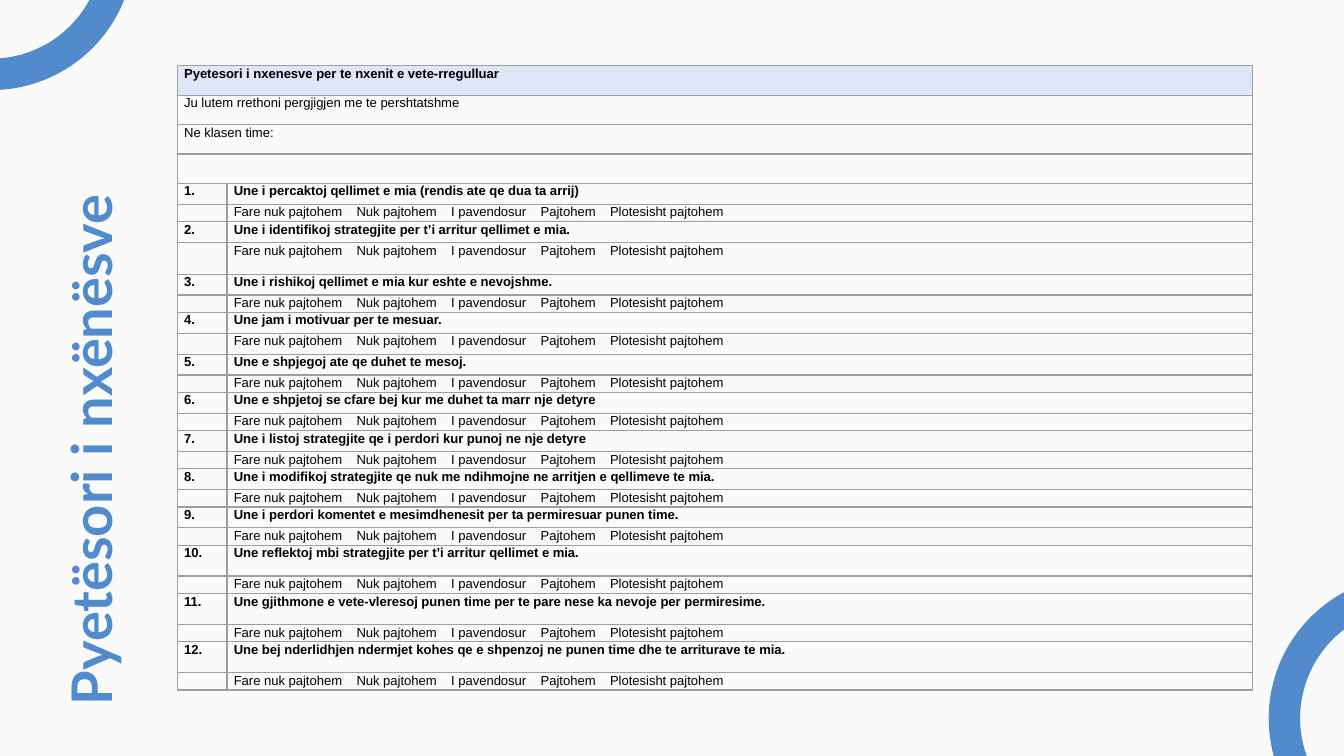
from dataclasses import dataclass

from lxml import etree
from pptx import Presentation
from pptx.dml.color import RGBColor
from pptx.enum.shapes import MSO_SHAPE
from pptx.enum.text import MSO_ANCHOR
from pptx.oxml.ns import qn
from pptx.util import Inches, Pt

BLOCK_ARC = MSO_SHAPE.BLOCK_ARC
TOP = MSO_ANCHOR.TOP

PAPER = RGBColor(0xFA, 0xFA, 0xFA)
BLUE = RGBColor(0x51, 0x8B, 0xCB)
HEADER_BLUE = RGBColor(0xDE, 0xE6, 0xF7)
GRID_GREY = RGBColor(0x9E, 0x9E, 0x9E)
BLACK = RGBColor(0, 0, 0)

TEXT_SIZE = Pt(7)
GRID_WIDTH = Pt(0.75)
# Row heights follow the type, so they are in points
INTRO_HEIGHT = 15.75
TALL = 16.6


@dataclass(frozen=True)
class Question:
    text: str
    height: float = 11.2
    answer_height: float = 8.8


@dataclass(frozen=True)
class Ring:
    left: float
    top: float
    rotation: int


INTRO = [
    "Pyetesori i nxenesve per te nxenit e vete-rregulluar",
    "Ju lutem rrethoni pergjigjen me te pershtatshme",
    "Ne klasen time:",
    "",
]
QUESTIONS = [
    Question("Une i percaktoj qellimet e mia (rendis ate qe dua ta arrij)"),
    Question("Une i identifikoj strategjite per t’i arritur qellimet e mia.", answer_height=17),
    Question("Une i rishikoj qellimet e mia kur eshte e nevojshme."),
    Question("Une jam i motivuar per te mesuar.", answer_height=11.2),
    Question("Une e shpjegoj ate qe duhet te mesoj."),
    Question("Une e shpjetoj se cfare bej kur me duhet ta marr nje detyre"),
    Question("Une i listoj strategjite qe i perdori kur punoj ne nje detyre"),
    Question("Une i modifikoj strategjite qe nuk me ndihmojne ne arritjen e qellimeve te mia."),
    Question("Une i perdori komentet e mesimdhenesit per ta permiresuar punen time."),
    Question("Une reflektoj mbi strategjite per t’i arritur qellimet e mia.", TALL),
    Question("Une gjithmone e vete-vleresoj punen time per te pare nese ka nevoje per permiresime.", TALL),
    Question("Une bej nderlidhjen ndermjet kohes qe e shpenzoj ne punen time dhe te arriturave te mia.", TALL),
]
ANSWERS = "    ".join(
    ["Fare nuk pajtohem", "Nuk pajtohem", "I pavendosur", "Pajtohem", "Plotesisht pajtohem"]
)
RINGS = [Ring(9.44, 4.28, 270), Ring(-1.13, -1.46, 180)]


def add_run(paragraph, text: str, font: str, size: Pt, color: RGBColor, bold: bool) -> None:
    run = paragraph.add_run()
    run.text = text
    run.font.name = font
    run.font.size = size
    run.font.bold = bold
    run.font.color.rgb = color


def add_borders(cell) -> None:
    properties = cell._tc.get_or_add_tcPr()
    for side in ("a:lnL", "a:lnR", "a:lnT", "a:lnB"):
        line = etree.SubElement(properties, qn(side), w=str(GRID_WIDTH))
        solid = etree.SubElement(line, qn("a:solidFill"))
        etree.SubElement(solid, qn("a:srgbClr"), val=str(GRID_GREY))


def fill_cell(cell, text: str, bold: bool = False) -> None:
    cell.margin_left = cell.margin_right = Inches(0.05)
    cell.margin_top = cell.margin_bottom = Pt(0.45)
    cell.vertical_anchor = TOP
    add_borders(cell)
    cell.fill.background()
    paragraph = cell.text_frame.paragraphs[0]
    if text:
        add_run(paragraph, text, "Arial", TEXT_SIZE, BLACK, bold)
    else:
        # Small type keeps an empty cell from stretching its row
        etree.SubElement(paragraph._p, qn("a:endParaRPr"), sz=str(int(TEXT_SIZE.pt * 100)))


def add_title(slide, text: str) -> None:
    title = slide.shapes.add_textbox(Inches(-1.8), Inches(2.55), Inches(4.97), Inches(0.62))
    title.rotation = 270
    frame = title.text_frame
    frame.word_wrap = True
    frame.vertical_anchor = TOP
    frame.margin_left = frame.margin_right = Inches(0.1)
    frame.margin_top = frame.margin_bottom = Inches(0.1)
    paragraph = frame.paragraphs[0]
    paragraph.line_spacing = 0.9
    paragraph.space_after = Pt(6)
    add_run(paragraph, text, "Lato", Pt(30), BLUE, True)


def add_questionnaire(slide) -> None:
    heights = [INTRO_HEIGHT] * len(INTRO)
    for question in QUESTIONS:
        heights += [question.height, question.answer_height]
    table = slide.shapes.add_table(
        len(heights), 2, Inches(1.32), Inches(0.49), Inches(8), Pt(sum(heights))
    ).table
    table.first_row = table.horz_banding = False
    table.columns[0].width = Inches(0.37)
    table.columns[1].width = Inches(7.63)
    for row, height in zip(table.rows, heights):
        row.height = Pt(height)

    # Introduction across both columns
    for index, text in enumerate(INTRO):
        first, second = table.cell(index, 0), table.cell(index, 1)
        first.merge(second)
        fill_cell(first, text, bold=index == 0)
        fill_cell(second, "")
    heading = table.cell(0, 0)
    heading.fill.solid()
    heading.fill.fore_color.rgb = HEADER_BLUE

    # Each question with its answer scale below
    for number, question in enumerate(QUESTIONS, start=1):
        row = len(INTRO) + 2 * (number - 1)
        fill_cell(table.cell(row, 0), f"{number}.", bold=True)
        fill_cell(table.cell(row, 1), question.text, bold=True)
        fill_cell(table.cell(row + 1, 0), "")
        fill_cell(table.cell(row + 1, 1), ANSWERS)


def add_ring(slide, ring: Ring) -> None:
    arc = slide.shapes.add_shape(
        BLOCK_ARC, Inches(ring.left), Inches(ring.top), Inches(2.13), Inches(2.13)
    )
    arc.rotation = ring.rotation
    arc._element.spPr.xfrm.set("flipH", "1")
    for index, value in enumerate((108, 53.84, 0.11)):
        arc.adjustments[index] = value
    arc.shadow.inherit = False
    arc.fill.solid()
    arc.fill.fore_color.rgb = BLUE
    arc.line.fill.background()


def main() -> None:
    presentation = Presentation()
    # Widescreen, 16 to 9
    presentation.slide_width = Inches(10)
    presentation.slide_height = Inches(10 * 9 / 16)
    slide = presentation.slides.add_slide(presentation.slide_layouts[6])
    slide.background.fill.solid()
    slide.background.fill.fore_color.rgb = PAPER

    add_title(slide, "Pyetësori i nxënësve")
    add_questionnaire(slide)
    for ring in RINGS:
        add_ring(slide, ring)
    presentation.save("out.pptx")


if __name__ == "__main__":
    main()
